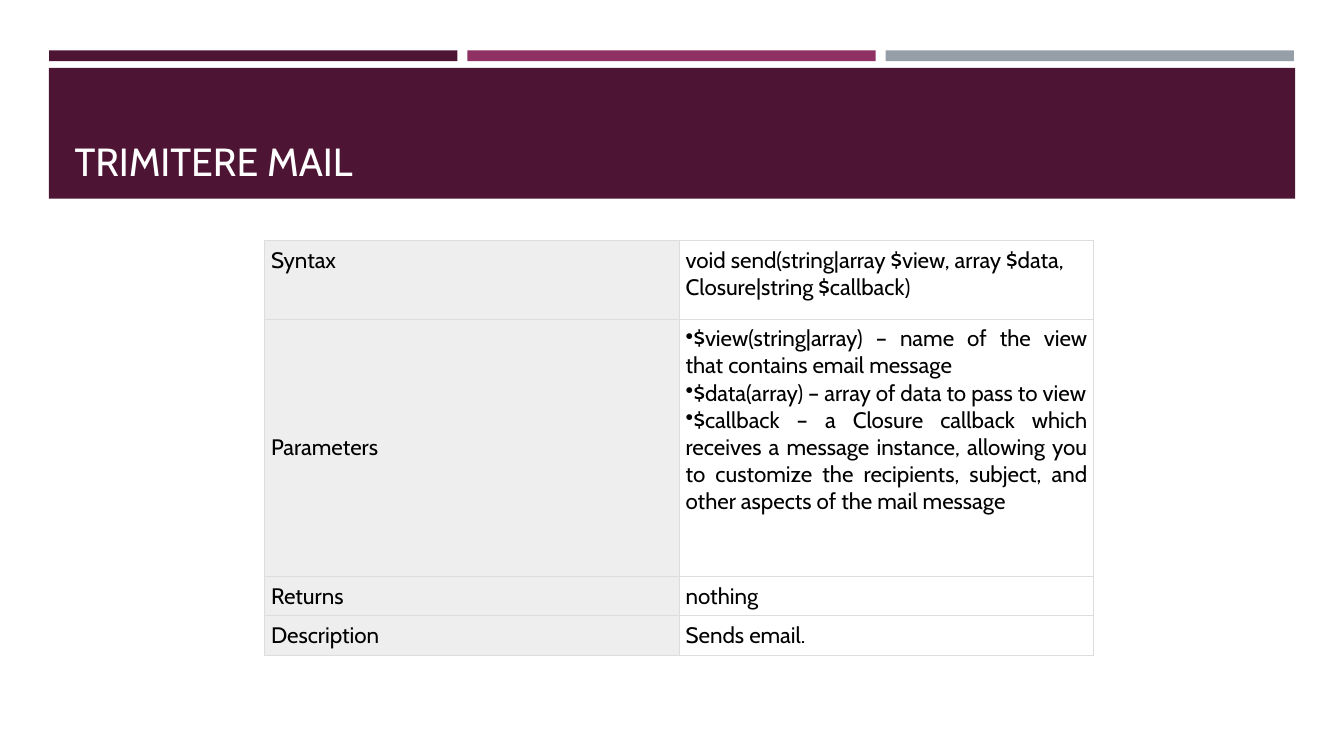
"""Build the slide that documents the mail sending method."""
from lxml import etree
from pptx import Presentation
from pptx.dml.color import RGBColor
from pptx.enum.shapes import MSO_SHAPE
from pptx.enum.text import MSO_ANCHOR as Anchor, PP_ALIGN as Align
from pptx.oxml import parse_xml
from pptx.oxml.ns import nsdecls, qn
from pptx.util import Cm, Pt

FONT = "Cabin"
PLUM = "4D1434"


def color(value):
    return RGBColor.from_string(value)


def style(paragraph, size, value):
    paragraph.font.name = FONT
    paragraph.font.size = Pt(size)
    paragraph.font.color.rgb = color(value)


presentation = Presentation()
presentation.slide_width, presentation.slide_height = Cm(33.87), Cm(19.05)
slide = presentation.slides.add_slide(presentation.slide_layouts[6])

blocks = [(1.24 + 10.54 * index, 1.27, 10.29, 0.27, fill)
          for index, fill in enumerate((PLUM, "903163", "969FA7"))]
blocks.append((1.23, 1.71, 31.41, 3.3, PLUM))
for left, top, width, height, fill in blocks:
    shape = slide.shapes.add_shape(
        MSO_SHAPE.RECTANGLE, Cm(left), Cm(top), Cm(width), Cm(height))
    shape.shadow.inherit = False
    shape.fill.solid()
    shape.fill.fore_color.rgb = color(fill)
    shape.line.fill.background()

title = slide.shapes.add_textbox(Cm(1.63), Cm(1.96), Cm(30.63), Cm(2.82))
title.text_frame.word_wrap = True
title.text_frame.vertical_anchor = Anchor.BOTTOM
title.text_frame.text = "TRIMITERE MAIL"
style(title.text_frame.paragraphs[0], 28, "FFFFFF")

rows = [
    (1.98, "Syntax", ["void send(string|array $view, array $data, Closure|string $callback)"]),
    (6.48, "Parameters", [
        "$view(string|array) – name of the view that contains email message",
        "$data(array) – array of data to pass to view",
        "$callback – a Closure callback which receives a message instance, "
        "allowing you to customize the recipients, subject, and other aspects "
        "of the mail message",
    ]),
    (1, "Returns", ["nothing"]),
    (1, "Description", ["Sends email."]),
]
table = slide.shapes.add_table(
    len(rows), 2, Cm(6.67), Cm(6.06), Cm(20.9), Cm(10.46)).table
table.first_row = False
table.horz_banding = False
for column in table.columns:
    column.width = Cm(10.45)

for row_index, (height, label, lines) in enumerate(rows):
    table.rows[row_index].height = Cm(height)
    for column_index, texts in enumerate(([label], lines)):
        cell = table.cell(row_index, column_index)
        cell.margin_left = cell.margin_right = Cm(0.16)
        cell.margin_top = cell.margin_bottom = Cm(0.16)
        cell.text = "\n".join(texts)
        for paragraph in cell.text_frame.paragraphs:
            style(paragraph, 16, "000000")
            if len(texts) > 1:
                paragraph.alignment = Align.JUSTIFY
                properties = paragraph._p.get_or_add_pPr()
                properties.set("marL", "0")
                properties.set("indent", "0")
                bullet = etree.Element(qn("a:buChar"), char="•")
                properties.insert_element_before(bullet, "a:tabLst", "a:defRPr", "a:extLst")
        for side in "LRTB":
            cell._tc.get_or_add_tcPr().append(parse_xml(
                f'<a:ln{side} {nsdecls("a")} w="{Pt(0.75)}"><a:solidFill>'
                f'<a:srgbClr val="DDDDDD"/></a:solidFill></a:ln{side}>'))
        if column_index == 0:
            cell.fill.solid()
            cell.fill.fore_color.rgb = color("EEEEEE")
        else:
            cell.fill.background()
        if label == "Parameters" and column_index == 0:
            cell.vertical_anchor = Anchor.MIDDLE

presentation.save("out.pptx")
